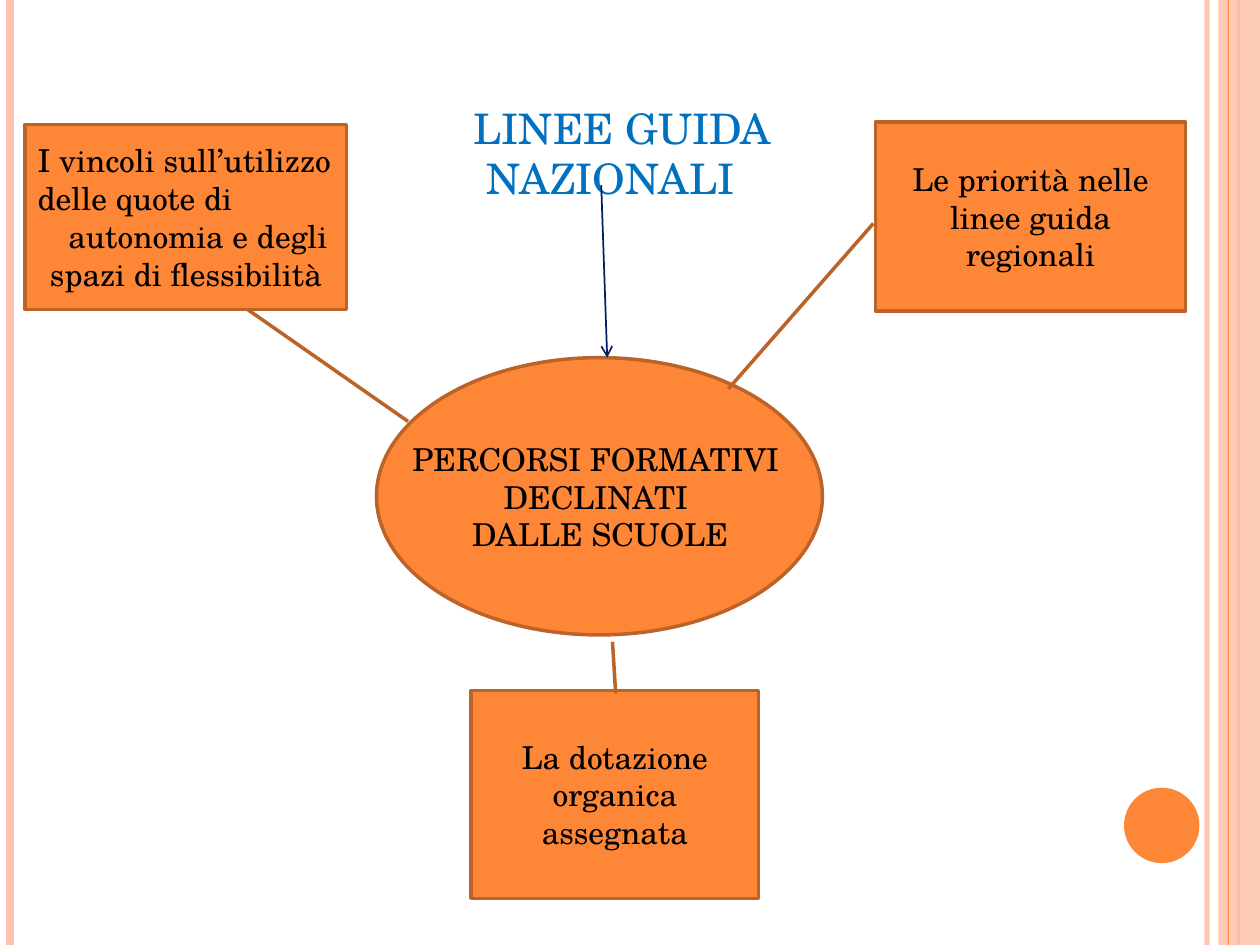
from dataclasses import dataclass
from typing import Any

from lxml.etree import SubElement
from pptx import Presentation
from pptx.dml.color import RGBColor
from pptx.enum.shapes import MSO_CONNECTOR, MSO_SHAPE
from pptx.enum.text import MSO_ANCHOR, MSO_AUTO_SIZE, PP_ALIGN
from pptx.oxml.ns import qn
from pptx.util import Cm, Pt


@dataclass(frozen=True)
class Theme:
    font: str = "TeX Gyre Schola"
    orange: str = "FE8637"
    outline: str = "BC6329"
    pink: str = "FEC3AE"
    navy: str = "002060"
    blue: str = "0070C0"
    black: str = "000000"
    title_size: float = 24
    body_size: float = 18
    outline_width: float = 2


THEME = Theme()
PAGE_WIDTH, PAGE_HEIGHT = 25.4, 19.05
FIRST_LINE_INDENT = 0.48


@dataclass(frozen=True)
class Area:
    left: float
    top: float
    width: float
    height: float

    def lengths(self) -> tuple:
        return Cm(self.left), Cm(self.top), Cm(self.width), Cm(self.height)


@dataclass(frozen=True)
class Line:
    text: str
    align: Any = PP_ALIGN.CENTER
    indent: float = 0


@dataclass(frozen=True)
class Rule:
    x: float
    color: str
    width: float
    opacity: int = 100


@dataclass(frozen=True)
class Callout:
    area: Area
    pointer: tuple
    lines: tuple


RULES = (
    Rule(24.33, THEME.pink, 3, 93),
    Rule(0.2, THEME.pink, 4.5),
    Rule(24.97, THEME.orange, 1.5),
)
INNER_RULE = Rule(24.77, THEME.orange, 0.75)
SIDE_BAND = Area(24.56, 0, 0.84, PAGE_HEIGHT)
CORNER_DISC = Area(22.66, 15.88, 1.52, 1.52)
CENTRE_OVAL = Area(7.59, 7.21, 8.99, 5.59)
CENTRE_TEXT = Area(6.6, 8.74, 11, 2.57)
TITLE = Area(8.71, 1.93, 7.19, 2.31)

CALLOUTS = (
    Callout(Area(17.65, 2.46, 6.25, 3.81), (0.537, -0.007, 1.413, -0.475),
            (Line("Le priorità nelle linee guida regionali"),)),
    Callout(Area(0.51, 2.51, 6.48, 3.73), (1.605, 1.191, 0.999, 0.691),
            (Line("I vincoli sull’utilizzo delle quote di", PP_ALIGN.LEFT),
             Line("autonomia e degli spazi di flessibilità", indent=FIRST_LINE_INDENT))),
    Callout(Area(9.5, 13.92, 5.79, 4.19), (-0.234, 0.492, 0.014, 0.503),
            (Line("La dotazione organica assegnata"),)),
)


def set_opacity(properties: Any, percent: int) -> None:
    """Make the solid colour found in these shape or line properties translucent."""
    if percent < 100:
        color = properties.find(".//" + qn("a:srgbClr"))
        SubElement(color, qn("a:alpha"), val=str(percent * 1000))


def write_text(frame: Any, lines: tuple, *, size: float = THEME.body_size,
               color: str = THEME.black, anchor: Any = MSO_ANCHOR.TOP) -> None:
    frame.word_wrap = True
    frame.auto_size = MSO_AUTO_SIZE.NONE
    frame.vertical_anchor = anchor
    for index, line in enumerate(lines):
        para = frame.paragraphs[0] if index == 0 else frame.add_paragraph()
        para.alignment = line.align
        if line.indent:
            para._p.get_or_add_pPr().set("indent", str(Cm(line.indent)))
        span = para.add_run()
        span.text = line.text
        span.font.name = THEME.font
        span.font.size = Pt(size)
        span.font.color.rgb = RGBColor.from_string(color)


def add_box(page: Any, kind: Any, area: Area, *, fill: str = THEME.orange,
            outlined: bool = False, opacity: int = 100) -> Any:
    box = page.shapes.add_shape(kind, *area.lengths())
    box.shadow.inherit = False
    box.fill.solid()
    box.fill.fore_color.rgb = RGBColor.from_string(fill)
    set_opacity(box._element.spPr, opacity)
    if outlined:
        box.line.color.rgb = RGBColor.from_string(THEME.outline)
        box.line.width = Pt(THEME.outline_width)
    else:
        box.line.fill.background()
    return box


def add_line(page: Any, start: tuple, end: tuple, *, color: str, width: float,
             opacity: int = 100, arrow: bool = False) -> None:
    connector = page.shapes.add_connector(
        MSO_CONNECTOR.STRAIGHT, *(Cm(value) for value in start + end))
    connector.line.color.rgb = RGBColor.from_string(color)
    connector.line.width = Pt(width)
    properties = connector._element.spPr
    set_opacity(properties, opacity)
    if arrow:
        SubElement(properties.find(qn("a:ln")), qn("a:tailEnd"), type="arrow")
    SubElement(properties, qn("a:effectLst"))


def add_rule(page: Any, rule: Rule) -> None:
    """Draw a vertical line over the full page height."""
    add_line(page, (rule.x, 0), (rule.x, PAGE_HEIGHT), color=rule.color,
             width=rule.width, opacity=rule.opacity)


def add_callout(page: Any, callout: Callout) -> None:
    box = add_box(page, MSO_SHAPE.LINE_CALLOUT_1, callout.area, outlined=True)
    for index, value in enumerate(callout.pointer):
        box.adjustments[index] = value
    write_text(box.text_frame, callout.lines, anchor=MSO_ANCHOR.MIDDLE)


def add_decoration(page: Any) -> None:
    for rule in RULES:
        add_rule(page, rule)
    add_box(page, MSO_SHAPE.RECTANGLE, SIDE_BAND, fill=THEME.pink, opacity=87)
    add_rule(page, INNER_RULE)
    add_box(page, MSO_SHAPE.OVAL, CORNER_DISC)


def add_title(page: Any) -> None:
    title = page.shapes.title
    title.left, title.top, title.width, title.height = TITLE.lengths()
    write_text(title.text_frame,
               (Line("LINEE GUIDA", indent=FIRST_LINE_INDENT), Line("NAZIONALI")),
               size=THEME.title_size, color=THEME.blue)


def main() -> None:
    deck = Presentation()
    deck.slide_width, deck.slide_height = Cm(PAGE_WIDTH), Cm(PAGE_HEIGHT)
    page = deck.slides.add_slide(deck.slide_layouts[5])

    add_title(page)
    add_decoration(page)
    add_box(page, MSO_SHAPE.OVAL, CENTRE_OVAL, outlined=True)
    centre = page.shapes.add_textbox(*CENTRE_TEXT.lengths())
    write_text(centre.text_frame, (Line("PERCORSI FORMATIVI "),
                                   Line("DECLINATI "), Line("DALLE SCUOLE")))
    for callout in CALLOUTS:
        add_callout(page, callout)
    add_line(page, (12.12, 3.73), (12.24, CENTRE_OVAL.top),
             color=THEME.navy, width=1, arrow=True)

    deck.save("out.pptx")


if __name__ == "__main__":
    main()
